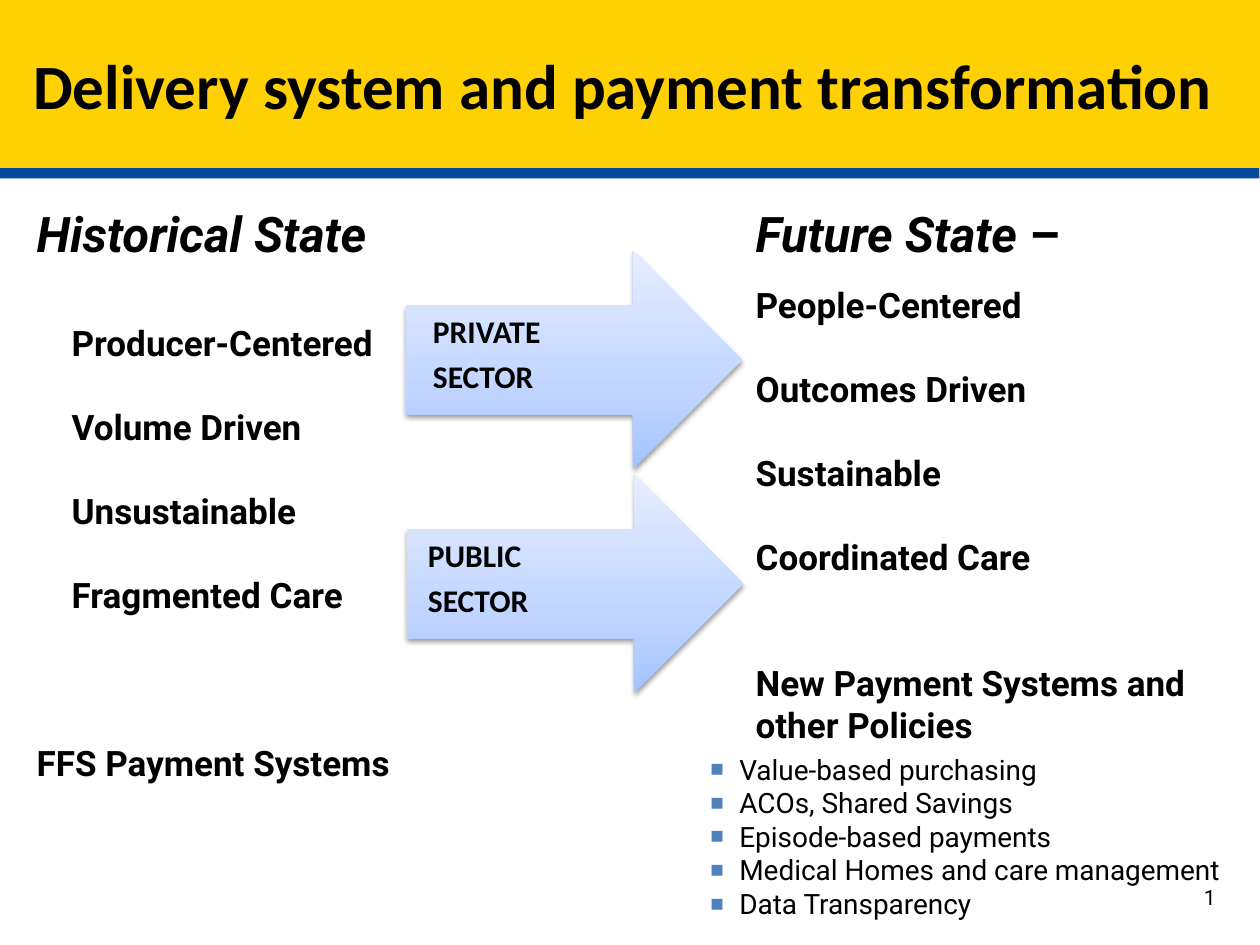
from copy import deepcopy

from lxml.etree import SubElement
from pptx import Presentation
from pptx.dml.color import RGBColor
from pptx.enum.shapes import MSO_SHAPE
from pptx.enum.text import MSO_ANCHOR, MSO_AUTO_SIZE, PP_ALIGN
from pptx.oxml.ns import qn
from pptx.util import Emu, Pt

PX = 914400 / 126
COLORS = {
    "text": "000000", "banner": "FFD004", "rule": "084A9C", "bullet": "4F81BD",
    "arrow_low": "A4C4FF", "arrow_mid": "BFD4FF", "arrow_high": "E6EEFF",
}
BODY_FONT, TITLE_FONT = "Roboto", "Calibri"
LINE = 24  # points taken by one skipped line between column items


def px(length):
    return Emu(round(length * PX))


def rgb(name):
    return RGBColor.from_string(COLORS[name])


def place(shape, box):
    shape.left, shape.top, shape.width, shape.height = map(px, box)


def style(font, size, name=BODY_FONT, bold=False, italic=False):
    font.name, font.size, font.bold, font.italic = name, Pt(size), bold, italic
    font.color.rgb = rgb("text")


def add_run(paragraph, text, size, **look):
    run = paragraph.add_run()
    run.text = text
    style(run.font, size, **look)


def paragraphs(frame):
    """Yield the frame's first paragraph, then new ones without end."""
    yield frame.paragraphs[0]
    while True:
        yield frame.add_paragraph()


def set_bullet(paragraph, char=None, margin=0, indent=0):
    props = paragraph._p.get_or_add_pPr()
    props.set("marL", str(px(margin)))
    props.set("indent", str(px(indent)))
    if char is None:
        SubElement(props, qn("a:buNone"))
        return
    color = SubElement(props, qn("a:buClr"))
    SubElement(color, qn("a:srgbClr"), val=COLORS["bullet"])
    SubElement(props, qn("a:buSzPct"), val="80000")
    SubElement(props, qn("a:buFont"), typeface="Arial")
    SubElement(props, qn("a:buChar"), char=char)


def set_shadow(shape, color, opacity, blur, distance, angle):
    """Blur and distance are in points, the angle in degrees."""
    shape.shadow.inherit = False
    effects = shape._element.spPr.find(qn("a:effectLst"))
    outer = SubElement(effects, qn("a:outerShdw"), blurRad=str(Pt(blur)),
                       dist=str(Pt(distance)), dir=str(angle * 60000),
                       algn="ctr", rotWithShape="0")
    shade = SubElement(outer, qn("a:srgbClr"), val=COLORS[color])
    SubElement(shade, qn("a:alpha"), val=str(opacity * 1000))


def fill_banner(title, box, text):
    place(title, box)
    title.fill.solid()
    title.fill.fore_color.rgb = rgb("banner")
    set_shadow(title, "rule", 100, 0, 6, 94)
    frame = title.text_frame
    frame.auto_size = MSO_AUTO_SIZE.NONE
    frame.vertical_anchor = MSO_ANCHOR.MIDDLE
    frame.paragraphs[0].alignment = PP_ALIGN.CENTER
    add_run(frame.paragraphs[0], text, 36, name=TITLE_FONT, bold=True)


def fill_column(body, box, heading, items):
    """Heading is (text, italic) runs; items are (text, space before, margin)."""
    place(body, box)
    frame = body.text_frame
    frame.auto_size = MSO_AUTO_SIZE.NONE
    lines = paragraphs(frame)
    header = next(lines)
    set_bullet(header)
    header.space_before = Pt(0)
    for text, italic in heading:
        add_run(header, text, 28, bold=True, italic=italic)
    for (text, gap, margin), line in zip(items, lines):
        set_bullet(line, margin=margin)
        line.space_before = Pt(gap)
        add_run(line, text, 20, bold=True)


def add_sector_arrow(slide, box, words, label_x):
    left, top, width, height = box
    group = slide.shapes.add_group_shape()
    arrow = group.shapes.add_shape(MSO_SHAPE.RIGHT_ARROW, *map(px, box))
    arrow.line.fill.background()
    arrow.fill.gradient()
    arrow.fill.gradient_angle = 90
    stops = arrow._element.spPr.find(qn("a:gradFill")).find(qn("a:gsLst"))
    stops.insert(1, deepcopy(stops[0]))
    ramp = [(0, "arrow_low"), (0.35, "arrow_mid"), (1, "arrow_high")]
    for stop, (position, color) in zip(arrow.fill.gradient_stops, ramp):
        stop.position = position
        stop.color.rgb = rgb(color)
    set_shadow(arrow, "text", 38, 3.1, 1.6, 90)

    label_box = (left + label_x, top + 50, 275, 110)
    frame = group.shapes.add_textbox(*map(px, label_box)).text_frame
    frame.word_wrap = True
    frame.vertical_anchor = MSO_ANCHOR.MIDDLE
    frame.margin_left = frame.margin_right = 0
    frame.margin_top = frame.margin_bottom = px(25)
    for word, line in zip(words, paragraphs(frame)):
        line.line_spacing = 0.9
        line.space_after = Pt(6.3)
        add_run(line, word, 18, name=TITLE_FONT, bold=True)


def add_policy_list(slide, box, policies):
    frame = slide.shapes.add_textbox(*map(px, box)).text_frame
    frame.word_wrap = True
    for policy, line in zip(policies, paragraphs(frame)):
        set_bullet(line, "■", margin=47, indent=-29)
        add_run(line, policy, 16)


def add_page_number(slide, box):
    frame = slide.shapes.add_textbox(*map(px, box)).text_frame
    frame.word_wrap = True
    frame.vertical_anchor = MSO_ANCHOR.MIDDLE
    line = frame.paragraphs[0]
    line.alignment = PP_ALIGN.RIGHT
    field = SubElement(line._p, qn("a:fld"), type="slidenum",
                       id="{B6F15528-21DE-4FAA-801E-634DDDAF4B2B}")
    look = SubElement(field, qn("a:rPr"), lang="en-US", sz="1200")
    fill = SubElement(look, qn("a:solidFill"))
    SubElement(fill, qn("a:srgbClr"), val=COLORS["text"])
    SubElement(look, qn("a:latin"), typeface=BODY_FONT)
    SubElement(field, qn("a:t")).text = "1"


def main():
    deck = Presentation()
    deck.slide_width, deck.slide_height = px(1260), px(945)
    slide = deck.slides.add_slide(deck.slide_layouts[3])
    title, historical, future = slide.placeholders

    fill_banner(title, (0, 0, 1260, 168),
                "Delivery system and payment transformation ")
    fill_column(historical, (24, 197, 388, 640), [("Historical State", True)], [
        ("Producer-Centered", 34, 35),
        ("Volume Driven", LINE, 35),
        ("Unsustainable", LINE, 35),
        ("Fragmented Care", LINE, 35),
        ("FFS Payment Systems", 3 * LINE, 0),
    ])
    fill_column(future, (743, 197, 483, 649),
                [("Future State ", True), ("–", False)], [
        ("People-Centered", LINE / 2, 0),
        ("Outcomes Driven", LINE, 0),
        ("Sustainable", LINE, 0),
        ("Coordinated Care", LINE, 0),
        ("New Payment Systems and other Policies", 2 * LINE, 0),
    ])
    add_sector_arrow(slide, (406, 251, 336, 218), ["PRIVATE", "SECTOR"], 27)
    add_sector_arrow(slide, (407, 475, 336, 218), ["PUBLIC", "SECTOR"], 21)
    add_policy_list(slide, (680, 746, 609, 183), [
        "Value-based purchasing",
        "ACOs, Shared Savings",
        "Episode-based payments",
        "Medical Homes and care management",
        "Data Transparency",
    ])
    add_page_number(slide, (1092, 872, 136, 50))
    deck.save("out.pptx")


if __name__ == "__main__":
    main()
